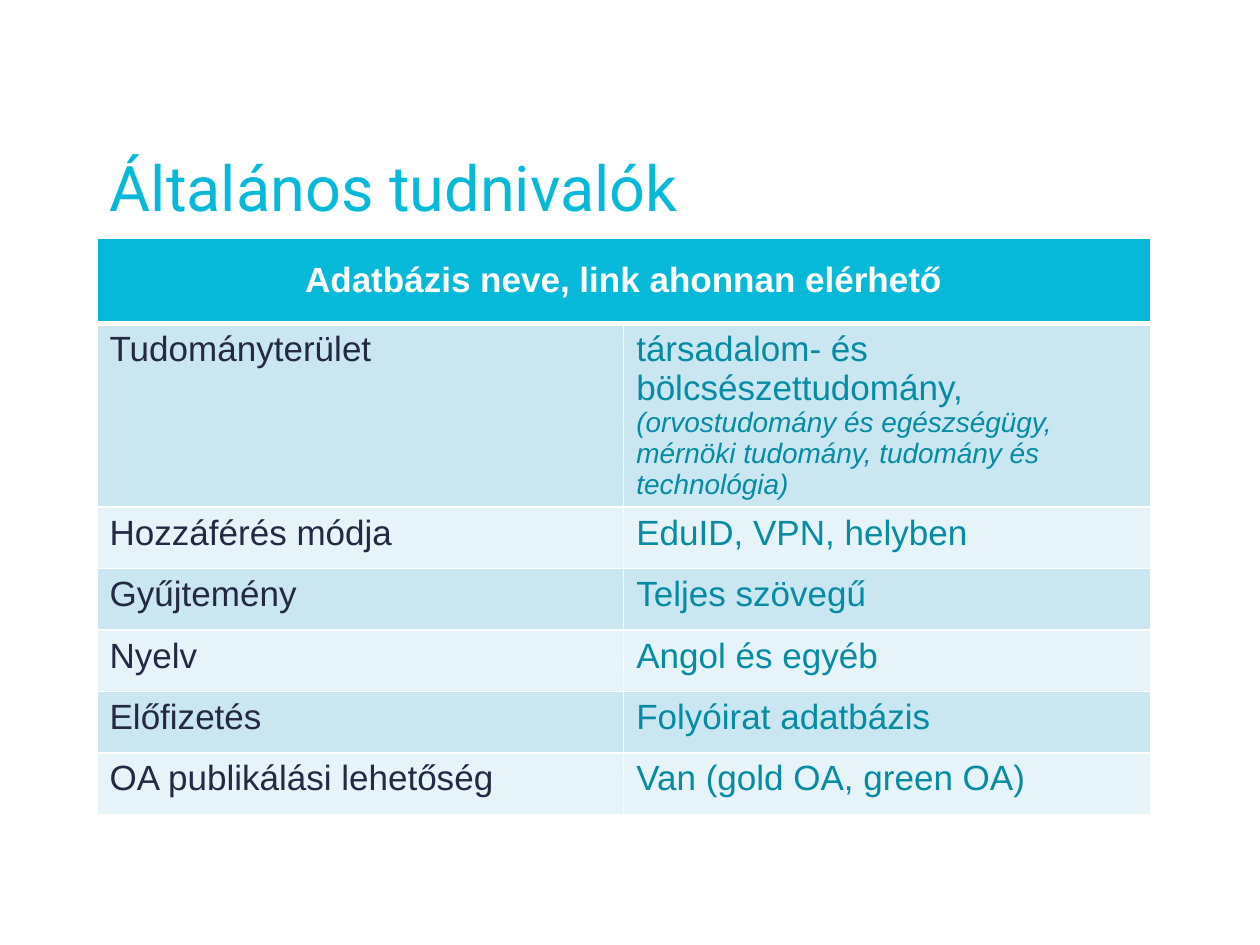
import lxml.etree
import pptx
import pptx.dml.color
import pptx.enum.text
import pptx.oxml.ns
import pptx.util

RGBColor = pptx.dml.color.RGBColor
Align = pptx.enum.text.PP_ALIGN
Anchor = pptx.enum.text.MSO_ANCHOR

CYAN = RGBColor(0x07, 0xB9, 0xD9)
TEAL = RGBColor(0x05, 0x8B, 0xA3)
NAVY = RGBColor(0x24, 0x29, 0x43)
WHITE = RGBColor(0xFF, 0xFF, 0xFF)
BANDS = (RGBColor(0xCA, 0xE6, 0xF1), RGBColor(0xE6, 0xF3, 0xF8))

HEADING = "Adatbázis neve, link ahonnan elérhető"
SUBJECT_NOTE = "(orvostudomány és egészségügy, mérnöki tudomány, tudomány és technológia)"
FACTS = [
    ("Tudományterület", "társadalom- és bölcsészettudomány,"),
    ("Hozzáférés módja", "EduID, VPN, helyben"),
    ("Gyűjtemény", "Teljes szövegű"),
    ("Nyelv", "Angol és egyéb"),
    ("Előfizetés", "Folyóirat adatbázis"),
    ("OA publikálási lehetőség", "Van (gold OA, green OA)"),
]


def write(para, text, font="Arial", size=20, color=NAVY, bold=False,
          italic=False, align=Align.LEFT, spacing=None):
    """Add formatted text to a paragraph."""
    para.alignment = align
    para.line_spacing = spacing
    span = para.add_run()
    span.text = text
    span.font.name = font
    span.font.size = pptx.util.Pt(size)
    span.font.bold = bold
    span.font.italic = italic
    span.font.color.rgb = color


class Builder:
    """Holds the deck, its slide size and the current page."""

    def __init__(self, width, height):
        self.deck = pptx.Presentation()
        self.deck.slide_width = pptx.util.Inches(width)
        self.deck.slide_height = pptx.util.Inches(height)
        self.page = None

    def across(self, share):
        return round(self.deck.slide_width * share / 100)

    def down(self, share):
        return round(self.deck.slide_height * share / 100)

    def new_page(self):
        title_only = self.deck.slide_layouts[5]
        self.page = self.deck.slides.add_slide(title_only)

    def title(self, text, left, top, width, height):
        box = self.page.shapes.title
        box.left, box.top = self.across(left), self.down(top)
        box.width, box.height = self.across(width), self.down(height)
        frame = box.text_frame
        frame.word_wrap = True
        frame.auto_size = pptx.enum.text.MSO_AUTO_SIZE.NONE
        frame.vertical_anchor = Anchor.TOP
        write(frame.paragraphs[0], text, font="Roboto", size=36, color=CYAN, spacing=0.9)

    def table(self, left, top, width, row_shares, columns):
        heights = [self.down(share) for share in row_shares]
        grid = self.page.shapes.add_table(
            len(heights), columns, self.across(left), self.down(top),
            self.across(width), sum(heights)).table
        for row, height in zip(grid.rows, heights):
            row.height = height
        return grid

    def style_cell(self, cell, fill, bottom=1):
        """Draw white borders, then fill the cell."""
        properties = cell._tc.get_or_add_tcPr()
        for side, points in (("L", 1), ("R", 1), ("T", 1), ("B", bottom)):
            line = lxml.etree.SubElement(properties, pptx.oxml.ns.qn(f"a:ln{side}"),
                                         w=str(pptx.util.Pt(points)))
            solid = lxml.etree.SubElement(line, pptx.oxml.ns.qn("a:solidFill"))
            lxml.etree.SubElement(solid, pptx.oxml.ns.qn("a:srgbClr"), val=str(WHITE))
        cell.fill.solid()
        cell.fill.fore_color.rgb = fill

    def save(self):
        self.deck.save("out.pptx")


def main():
    builder = Builder(10, 7.5)
    builder.new_page()
    builder.title("Általános tudnivalók", 7.7, 16, 61.4, 8)

    # Table with one tall subject row and equal rows below it
    row_shares = [9, 19.4] + [6.5] * (len(FACTS) - 1)
    grid = builder.table(7.7, 25.2, 83.6, row_shares, columns=2)

    # Heading across both columns
    for cell in grid.rows[0].cells:
        builder.style_cell(cell, CYAN, bottom=3)
    heading = grid.cell(0, 0)
    heading.merge(grid.cell(0, 1))
    heading.vertical_anchor = Anchor.MIDDLE
    write(heading.text_frame.paragraphs[0], HEADING, color=WHITE, bold=True,
          align=Align.CENTER)

    # Facts in alternating bands
    for index, fact in enumerate(FACTS):
        for column, (text, color) in enumerate(zip(fact, (NAVY, TEAL))):
            cell = grid.cell(index + 1, column)
            builder.style_cell(cell, BANDS[index % 2])
            write(cell.text_frame.paragraphs[0], text, color=color)
    write(grid.cell(1, 1).text_frame.add_paragraph(), SUBJECT_NOTE,
          size=16, color=TEAL, italic=True)

    builder.save()


if __name__ == "__main__":
    main()
